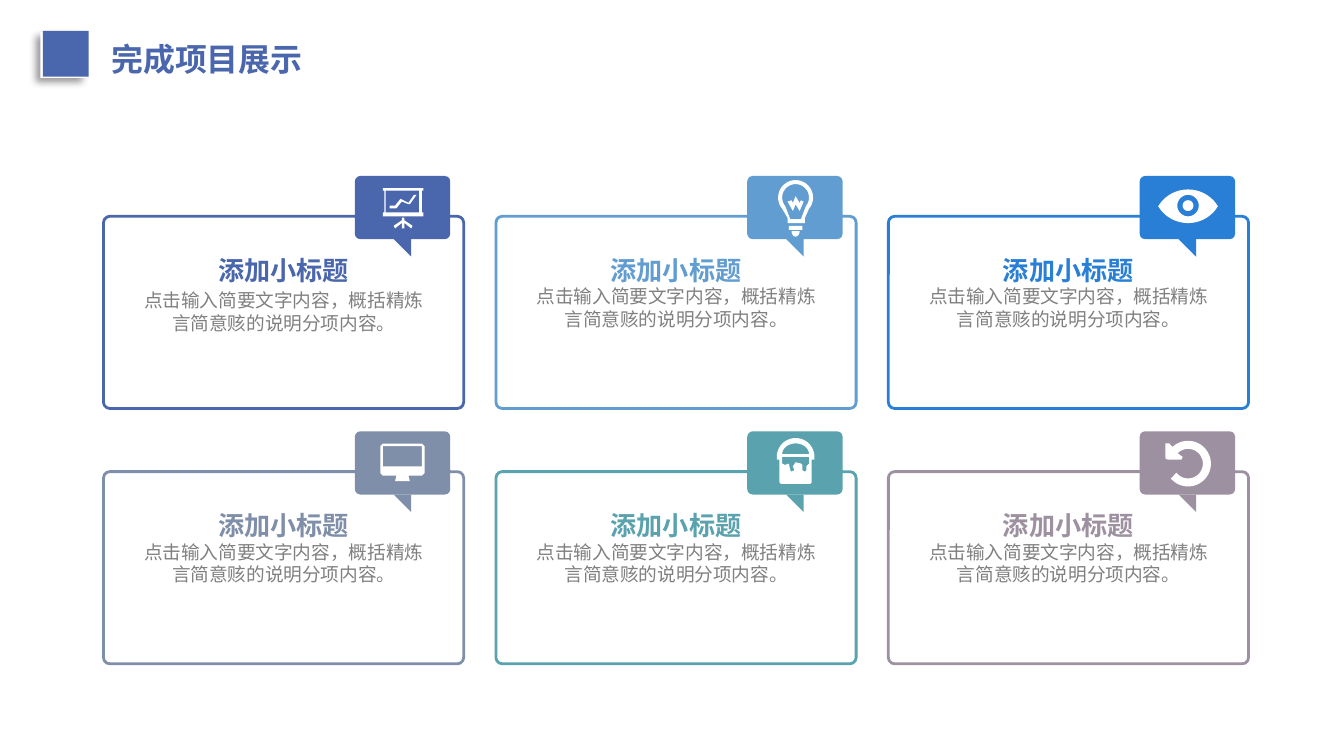
from math import cos, radians, sin

from lxml.etree import SubElement
from pptx import Presentation
from pptx.dml.color import RGBColor
from pptx.enum.shapes import MSO_SHAPE
from pptx.enum.text import MSO_ANCHOR, MSO_AUTO_SIZE, PP_ALIGN
from pptx.oxml.ns import qn
from pptx.util import Inches, Pt

TITLE = "完成项目展示"
HEADING = "添加小标题"
BODY = "点击输入简要文字内容，概括精炼言简意赅的说明分项内容。"
WHITE, GREY, BLUE = "FFFFFF", "808080", "4A66AC"
FONT = "Arial"
SLIDE_WIDTH = Inches(10)
SLIDE_HEIGHT = SLIDE_WIDTH * 9 // 16


def arc(center_x, center_y, radius_x, radius_y, start, end, steps=32):
    angles = [radians(start + (end - start) * step / steps) for step in range(steps + 1)]
    return [(center_x + radius_x * cos(a), center_y + radius_y * sin(a)) for a in angles]


def circle(center_x, center_y, radius):
    return arc(center_x, center_y, radius, radius, 0, 360)


def box(left, top, right, bottom):
    return [(left, top), (right, top), (right, bottom), (left, bottom)]


BOARD = [
    box(2.85, 1.4, 3.15, 1.42),
    box(2.86, 1.42, 2.87, 1.58),
    box(3.12, 1.42, 3.14, 1.58),
    box(2.85, 1.58, 3.15, 1.61),
    [(3.1, 1.45), (3.08, 1.45), (3.04, 1.51), (2.98, 1.48), (2.94, 1.53), (2.9, 1.53),
     (2.9, 1.55), (2.95, 1.55), (2.99, 1.5), (3.04, 1.52), (3.05, 1.52)],
    [(2.99, 1.62), (3.01, 1.62), (3.01, 1.64), (3.07, 1.68), (3.06, 1.7), (3.01, 1.66),
     (3.01, 1.7), (2.99, 1.7), (2.99, 1.66), (2.94, 1.7), (2.93, 1.68), (2.99, 1.64)],
]
BULB = [
    arc(5.92, 1.47, 0.13, 0.13, 140, 400) + [(5.99, 1.62), (5.99, 1.66), (5.86, 1.66), (5.86, 1.62)],
    arc(5.92, 1.47, 0.1, 0.1, 140, 400) + [(5.96, 1.63), (5.88, 1.63)],
    [(5.86, 1.5), (5.89, 1.49), (5.9, 1.51), (5.92, 1.46), (5.95, 1.51), (5.96, 1.49),
     (5.98, 1.5), (5.95, 1.57), (5.92, 1.52), (5.9, 1.57)],
    box(5.87, 1.68, 5.97, 1.71),
    arc(5.92, 1.72, 0.03, 0.04, 0, 180),
]
EYE = [
    arc(8.84, 1.67, 0.26, 0.26, 211, 329) + arc(8.84, 1.4, 0.26, 0.26, 31, 149),
    circle(8.84, 1.53, 0.08),
    circle(8.84, 1.53, 0.04),
]
MONITOR = [
    [(2.85, 3.3), (3.14, 3.3), (3.16, 3.32), (3.16, 3.52), (3.14, 3.54), (3.04, 3.54), (3.05, 3.58),
     (2.94, 3.58), (2.95, 3.54), (2.85, 3.54), (2.83, 3.52), (2.83, 3.32)],
    box(2.85, 3.32, 3.14, 3.47),
]
BUCKET = [
    arc(5.92, 3.4, 0.14, 0.14, 180, 360)
    + [(6.06, 3.42), (6.04, 3.42), (6.04, 3.59), (6.03, 3.6), (5.81, 3.6), (5.8, 3.59), (5.8, 3.42), (5.78, 3.42)],
    arc(5.92, 3.38, 0.1, 0.08, 180, 360),
    [(5.82, 3.4), (6.02, 3.4), (6.02, 3.45), (6, 3.47), (6, 3.5), (5.99, 3.51), (5.97, 3.5),
     (5.97, 3.46), (5.96, 3.45), (5.92, 3.44), (5.9, 3.47), (5.91, 3.5), (5.89, 3.51),
     (5.88, 3.5), (5.87, 3.45), (5.84, 3.46), (5.82, 3.45)],
]
UNDO = [
    arc(8.84, 3.45, 0.17, 0.17, 139, -133)
    + [(8.7, 3.3), (8.67, 3.3), (8.67, 3.41), (8.69, 3.42), (8.79, 3.42), (8.8, 3.4)]
    + arc(8.84, 3.45, 0.11, 0.11, -135, 142),
]
CARDS = [(BLUE, BOARD), ("629DD1", BULB), ("297FD5", EYE),
         ("7F8FA9", MONITOR), ("5AA2AE", BUCKET), ("9D90A0", UNDO)]
COLUMNS = 3
CARD_LEFT, CARD_TOP, PITCH_X, PITCH_Y = 0.77, 1.61, 2.92, 1.9


def color(value):
    return RGBColor.from_string(value)


def apply(target, values):
    for name, value in values.items():
        setattr(target, name, value)


def paint(shape, fill=None, line=None):
    shape.shadow.inherit = False
    if fill:
        shape.fill.solid()
        shape.fill.fore_color.rgb = color(fill)
    else:
        shape.fill.background()
    if line:
        shape.line.color.rgb = color(line)
        shape.line.width = Pt(1.5)
    else:
        shape.line.fill.background()


def add_block(slide, kind, left, top, width, height, fill=None, line=None, corner=None):
    shape = slide.shapes.add_shape(kind, Inches(left), Inches(top), Inches(width), Inches(height))
    paint(shape, fill, line)
    if corner:
        shape.adjustments[0] = corner
    return shape


def add_run(paragraph, text, size, fill, bold):
    run = paragraph.add_run()
    run.text = text
    apply(run.font, {"name": FONT, "size": Pt(size), "bold": bold})
    run.font.color.rgb = color(fill)


def add_icon(slide, contours):
    builder = None
    for contour in contours:
        points = [(Inches(x), Inches(y)) for x, y in contour]
        if builder is None:
            builder = slide.shapes.build_freeform(*points[0])
        else:
            builder.move_to(*points[0])
        builder.add_line_segments(points[1:], close=True)
    paint(builder.convert_to_shape(), WHITE)


def add_title(slide):
    title = slide.shapes.title
    apply(title, {"left": Inches(0.73), "top": Inches(0.19), "width": Inches(4.74), "height": Inches(0.42)})
    apply(title.text_frame, {"auto_size": MSO_AUTO_SIZE.NONE, "vertical_anchor": MSO_ANCHOR.TOP})
    paragraph = title.text_frame.paragraphs[0]
    apply(paragraph, {"alignment": PP_ALIGN.LEFT, "line_spacing": 1.2})
    add_run(paragraph, TITLE, 17.1, BLUE, True)


def add_marker(slide):
    back = add_block(slide, MSO_SHAPE.RECTANGLE, 0.3, 0.24, 0.34, 0.34, WHITE)
    effects = back._element.spPr.find(qn("a:effectLst"))
    shadow = SubElement(effects, qn("a:outerShdw"), blurRad=str(Pt(4)), dist=str(Pt(3)),
                        dir="8100000", algn="tr", rotWithShape="0")
    shade = SubElement(shadow, qn("a:srgbClr"), val="000000")
    SubElement(shade, qn("a:alpha"), val="40000")
    add_block(slide, MSO_SHAPE.RECTANGLE, 0.32, 0.23, 0.34, 0.34, BLUE)


def add_card(slide, index, accent, icon):
    row, column = divmod(index, COLUMNS)
    left, top = CARD_LEFT + column * PITCH_X, CARD_TOP + row * PITCH_Y
    add_block(slide, MSO_SHAPE.ROUNDED_RECTANGLE, left, top, 2.68, 1.43, line=accent, corner=0.033)
    add_block(slide, MSO_SHAPE.ROUNDED_RECTANGLE, left + 1.87, top - 0.3, 0.71, 0.47, accent, corner=0.087)
    add_block(slide, MSO_SHAPE.RIGHT_TRIANGLE, left + 2.16, top + 0.17, 0.13, 0.13, accent).rotation = 180
    add_icon(slide, icon)
    text_box = slide.shapes.add_textbox(Inches(left + 0.2), Inches(top + 0.23), Inches(2.28), Inches(0.67))
    frame = text_box.text_frame
    apply(frame, {"word_wrap": True, "margin_left": Inches(0.05), "margin_right": Inches(0.05)})
    paragraph = frame.paragraphs[0]
    paragraph.alignment = PP_ALIGN.CENTER
    add_run(paragraph, HEADING, 14, accent, True)
    if index == 0:
        text_box.height = Inches(0.71)
        paragraph = frame.add_paragraph()
        apply(paragraph, {"alignment": PP_ALIGN.CENTER, "space_before": Pt(2)})
    else:
        paragraph.add_line_break()
    add_run(paragraph, BODY, 10, GREY, False)


def main():
    presentation = Presentation()
    apply(presentation, {"slide_width": SLIDE_WIDTH, "slide_height": SLIDE_HEIGHT})
    slide = presentation.slides.add_slide(presentation.slide_layouts[5])
    add_title(slide)
    add_marker(slide)
    for index, (accent, icon) in enumerate(CARDS):
        add_card(slide, index, accent, icon)
    presentation.save("out.pptx")


if __name__ == "__main__":
    main()
